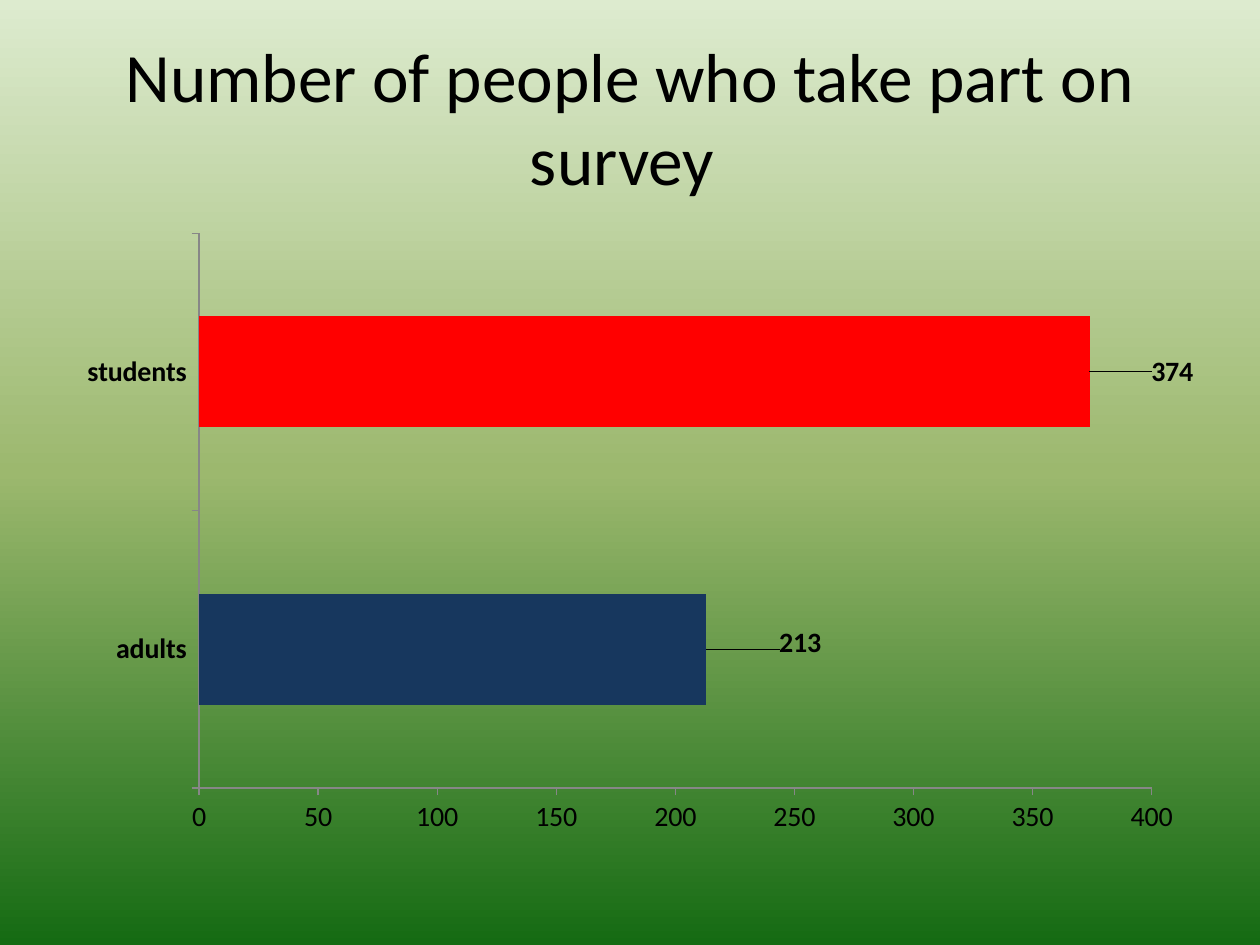
from copy import deepcopy

from lxml import etree
from pptx import Presentation
from pptx.chart.data import CategoryChartData
from pptx.dml.color import RGBColor
from pptx.enum.chart import XL_CHART_TYPE, XL_LABEL_POSITION, XL_TICK_MARK
from pptx.enum.text import MSO_ANCHOR, PP_ALIGN
from pptx.oxml.ns import qn
from pptx.util import Cm, Pt

BAR = XL_CHART_TYPE.BAR_CLUSTERED
OUTSIDE_END = XL_LABEL_POSITION.OUTSIDE_END
TICK_OUTSIDE = XL_TICK_MARK.OUTSIDE
MIDDLE = MSO_ANCHOR.MIDDLE
CENTER = PP_ALIGN.CENTER

FONT = "Calibri"
COLORS = {
    "text": "000000", "axis": "878787", "series": "4F81BD",
    "adults": "17375E", "students": "FF0000",
    "sky": "DDEBCF", "meadow": "9CB86E", "forest": "156B13",
}
PEOPLE = {"adults": 213, "students": 374}
# Label shifts as fractions of the chart's width and height
LABEL_SHIFTS = {"adults": (0.06, -0.01), "students": (0.05, 0)}


def color(name):
    return RGBColor.from_string(COLORS[name])


def set_font(font, size, bold=False):
    font.name = FONT
    font.size = Pt(size)
    font.bold = bold
    font.color.rgb = color("text")


def paint_background(page):
    fill = page.background.fill
    fill.gradient()
    fill.gradient_angle = 270
    stop_list = next(page.element.iter(qn("a:gsLst")))
    stop_list.append(deepcopy(stop_list[-1]))
    names = ("sky", "meadow", "forest")
    for number, (stop, name) in enumerate(zip(fill.gradient_stops, names)):
        stop.position = number / 2
        stop.color.rgb = color(name)


def add_title(page, left, top, width, height):
    frame = page.shapes.add_textbox(left, top, width, height).text_frame
    frame.word_wrap = True
    frame.vertical_anchor = MIDDLE
    para = frame.paragraphs[0]
    para.text = "Number of people who take part on survey "
    para.alignment = CENTER
    set_font(para.font, 39.6)


def add_manual_layout(parent, position, **values):
    """Insert a c:layout holding the given manual settings."""
    layout = etree.Element(qn("c:layout"))
    manual = etree.SubElement(layout, qn("c:manualLayout"))
    for tag, value in values.items():
        etree.SubElement(manual, qn(f"c:{tag}")).set("val", str(value))
    parent.insert(position, layout)


def style_axis(axis, bold=False):
    axis.has_major_gridlines = False
    axis.major_tick_mark = TICK_OUTSIDE
    axis.format.line.color.rgb = color("axis")
    axis.format.line.width = Pt(0.75)
    set_font(axis.tick_labels.font, 16, bold)


def style_bars(plot):
    plot.gap_width = 150
    plot.vary_by_categories = False
    plot.has_data_labels = True
    labels = plot.data_labels
    labels.show_value = True
    labels.position = OUTSIDE_END
    set_font(labels.font, 16, True)

    series = plot.series[0]
    series.format.fill.solid()
    series.format.fill.fore_color.rgb = color("series")
    for index, name in enumerate(PEOPLE):
        point = series.points[index]
        point.format.fill.solid()
        point.format.fill.fore_color.rgb = color(name)
        point.data_label.position = OUTSIDE_END
        set_font(point.data_label.font, 16, True)
    label_elements = plot.series[0]._element.iter(qn("c:dLbl"))
    for label, name in zip(label_elements, PEOPLE):
        shift_x, shift_y = LABEL_SHIFTS[name]
        add_manual_layout(label, 1, x=shift_x, y=shift_y)


def add_survey_chart(page, left, top, width, height):
    data = CategoryChartData()
    data.categories = list(PEOPLE)
    data.add_series("Series 1", list(PEOPLE.values()))
    chart = page.shapes.add_chart(BAR, left, top, width, height, data).chart
    chart.has_legend = False
    chart.has_title = False
    set_font(chart.font, 10)

    style_axis(chart.category_axis, bold=True)
    style_axis(chart.value_axis)
    chart.value_axis.minimum_scale = 0
    chart.value_axis.maximum_scale = 400
    chart.value_axis.major_unit = 50
    style_bars(chart.plots[0])

    plot_area = next(chart._chartSpace.iter(qn("c:plotArea")))
    for layout in plot_area.findall(qn("c:layout")):
        plot_area.remove(layout)
    add_manual_layout(plot_area, 0, layoutTarget="inner", xMode="edge",
                      yMode="edge", x=0.12, y=0.02, w=0.84, h=0.89)


def main():
    deck = Presentation()
    deck.slide_width, deck.slide_height = Cm(25.4), Cm(19.05)
    page = deck.slides.add_slide(deck.slide_layouts[6])
    margin = Cm(1.27)
    content_width = deck.slide_width - 2 * margin
    paint_background(page)
    add_title(page, margin, Cm(0.76), content_width, Cm(3.18))
    add_survey_chart(page, margin, Cm(4.45), content_width, Cm(12.57))
    deck.save("out.pptx")


if __name__ == "__main__":
    main()
